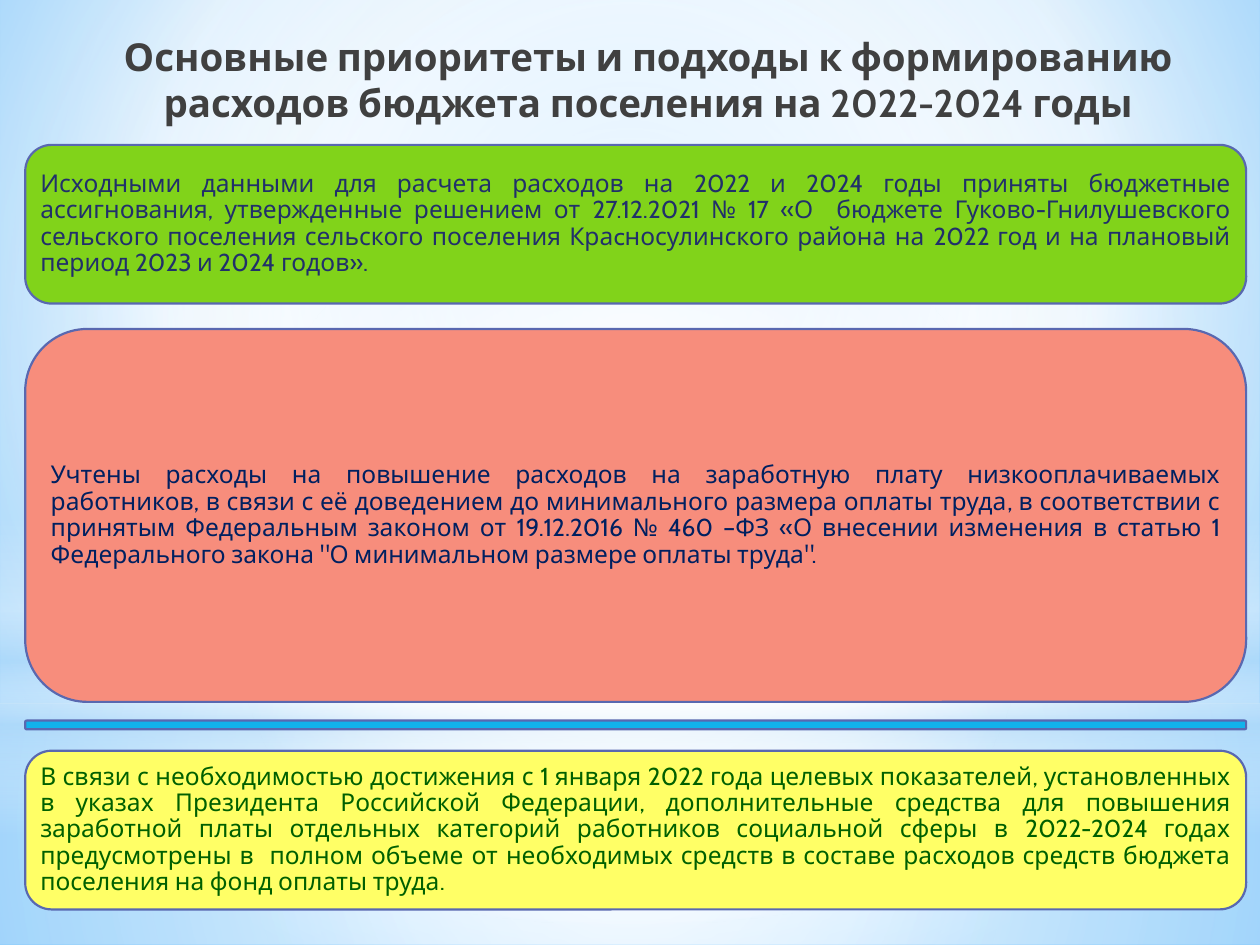
from dataclasses import dataclass

from lxml import etree
from pptx import Presentation
from pptx.dml.color import RGBColor
from pptx.enum.shapes import MSO_SHAPE
from pptx.enum.text import MSO_ANCHOR, MSO_AUTO_SIZE, PP_ALIGN
from pptx.oxml.ns import qn
from pptx.util import Pt

RECT, OVAL, ROUND = MSO_SHAPE.RECTANGLE, MSO_SHAPE.OVAL, MSO_SHAPE.ROUNDED_RECTANGLE
TOP, MIDDLE = MSO_ANCHOR.TOP, MSO_ANCHOR.MIDDLE
CENTER, JUSTIFY = PP_ALIGN.CENTER, PP_ALIGN.JUSTIFY


@dataclass(frozen=True)
class Theme:
    font: str = "Cabin"
    head_size: float = 22
    body_size: float = 14
    head: str = "404040"
    edge: str = "5968B0"
    green: str = "81D31A"
    coral: str = "F78D7C"
    blue: str = "12B2EB"
    yellow: str = "FFFF66"
    indigo: str = "21306A"
    navy: str = "002060"
    forest: str = "006000"
    white: str = "FFFFFF"
    haze: str = "B4DCFA"
    sky: str = "9ED5FF"
    deep: str = "5BB9FF"


THEME = Theme()
WIDE, HIGH = 720, 540
LEFT, SPAN = 14.4, 697.7
MID = (50, 50, 50, 50)

TITLE = "Основные приоритеты и подходы к формированию расходов бюджета поселения на 2022-2024 годы"
BASIS = (
    "Исходными данными для расчета расходов на 2022 и 2024 годы приняты бюджетные "
    "ассигнования, утвержденные решением от 27.12.2021 № 17 «О  бюджете "
    "Гуково-Гнилушевского сельского поселения сельского поселения Краcносулинского "
    "района на 2022 год и на плановый период 2023 и 2024 годов»."
)
WAGES = (
    "Учтены расходы на повышение расходов на заработную плату низкооплачиваемых "
    "работников, в связи с её доведением до минимального размера оплаты труда, "
    "в соответствии с принятым Федеральным законом от 19.12.2016 № 460 –ФЗ "
    "«О внесении изменения в статью 1 Федерального закона "
    "\"О минимальном размере оплаты труда\"."
)
GOALS = (
    "В связи с необходимостью достижения с 1 января 2022 года целевых показателей, "
    "установленных в указах Президента Российской Федерации, дополнительные средства "
    "для повышения заработной платы отдельных категорий работников социальной сферы "
    "в 2022-2024 годах предусмотрены в  полном объеме от необходимых средств в составе "
    "расходов средств бюджета поселения на фонд оплаты труда."
)


def blend(root, stops, focus=None):
    """Swap the first solid fill under root for a gradient: radial if focus is given, else vertical."""
    old = root.find(".//" + qn("a:solidFill"))
    grad = etree.Element(qn("a:gradFill"), rotWithShape="1")
    steps = etree.SubElement(grad, qn("a:gsLst"))
    for place, tint, alpha in stops:
        step = etree.SubElement(steps, qn("a:gs"), pos=str(place * 1000))
        color = etree.SubElement(step, qn("a:srgbClr"), val=tint)
        if alpha < 100:
            etree.SubElement(color, qn("a:alpha"), val=str(alpha * 1000))
    if focus:
        way = etree.SubElement(grad, qn("a:path"), path="circle")
        sides = {side: str(part * 1000) for side, part in zip("ltrb", focus)}
        etree.SubElement(way, qn("a:fillToRect"), **sides)
    else:
        etree.SubElement(grad, qn("a:lin"), ang="5400000", scaled="0")
    old.getparent().replace(old, grad)


def add_form(slide, kind, box, fill):
    form = slide.shapes.add_shape(kind, *map(Pt, box))
    form.shadow.inherit = False
    form.fill.solid()
    form.fill.fore_color.rgb = RGBColor.from_string(fill)
    form.line.fill.background()
    return form


def set_text(frame, text, size, color, align, bold=False):
    frame.text = text
    frame.word_wrap = True
    frame.auto_size = MSO_AUTO_SIZE.NONE
    para = frame.paragraphs[0]
    para.alignment = align
    font = para.runs[0].font
    font.name, font.size, font.bold = THEME.font, Pt(size), bold
    font.color.rgb = RGBColor.from_string(color)
    return para


def add_sky(slide, box):
    """Fill the background and lay the soft light over it."""
    left, top, width, height = box
    white, haze = THEME.white, THEME.haze
    back = slide.background.fill
    back.solid()
    back.fore_color.rgb = RGBColor.from_string(THEME.sky)
    blend(slide.element, [(0, THEME.sky, 100), (60, white, 100), (100, THEME.deep, 100)],
          (20, 10, 20, 60))
    split = 401.8
    layers = [
        (RECT, split, height - split,
         [(0, white, 91), (37, white, 76), (100, haze, 79)], MID),
        (RECT, 0, split,
         [(0, white, 89), (48, white, 62), (100, haze, 79)], MID),
        (RECT, 296.6, 180,
         [(0, white, 0), (29, white, 30), (45, haze, 40),
          (55, white, 26), (65, haze, 60), (100, white, 0)], None),
        (OVAL, 126, split, [(0, white, 100), (56, white, 0)], MID),
    ]
    for kind, drop, tall, stops, focus in layers:
        form = add_form(slide, kind, (left, top + drop, width, tall), white)
        blend(form.element, stops, focus)


def add_title(slide, box):
    title = slide.shapes.title
    slide.shapes.element.append(title.element)  # bring in front of the sky
    title.left, title.top, title.width, title.height = map(Pt, box)
    frame = title.text_frame
    set_text(frame, TITLE, THEME.head_size, THEME.head, CENTER, True)
    frame.vertical_anchor = TOP
    frame.margin_left, frame.margin_right = Pt(10.8), Pt(7.2)
    frame.margin_top = frame.margin_bottom = Pt(3.6)


def add_card(slide, box, fill, text="", color=THEME.navy):
    card = add_form(slide, ROUND, box, fill)
    card.line.color.rgb = RGBColor.from_string(THEME.edge)
    card.line.width = Pt(1.25)
    if not text:
        return
    frame = card.text_frame
    para = set_text(frame, text, THEME.body_size, color, JUSTIFY)
    para.line_spacing = 0.9
    frame.vertical_anchor = MIDDLE
    frame.margin_left = frame.margin_right = Pt(4.2)
    frame.margin_top = frame.margin_bottom = Pt(4.2)


def main():
    deck = Presentation()
    deck.slide_width, deck.slide_height = Pt(WIDE), Pt(HIGH)
    slide = deck.slides.add_slide(deck.slide_layouts.get_by_name("Title Only"))
    add_sky(slide, (0, 0, WIDE, HIGH))
    add_title(slide, (54, 15.1, 629.3, 62.6))
    cards = [
        (82.8, 90.7, THEME.green, BASIS, THEME.indigo),
        (188, 213.1, THEME.coral, WAGES, THEME.navy),
        (411.8, 5, THEME.blue),
        (429, 90.7, THEME.yellow, GOALS, THEME.forest),
    ]
    for top, tall, *look in cards:
        add_card(slide, (LEFT, top, SPAN, tall), *look)
    deck.save("out.pptx")


if __name__ == "__main__":
    main()
